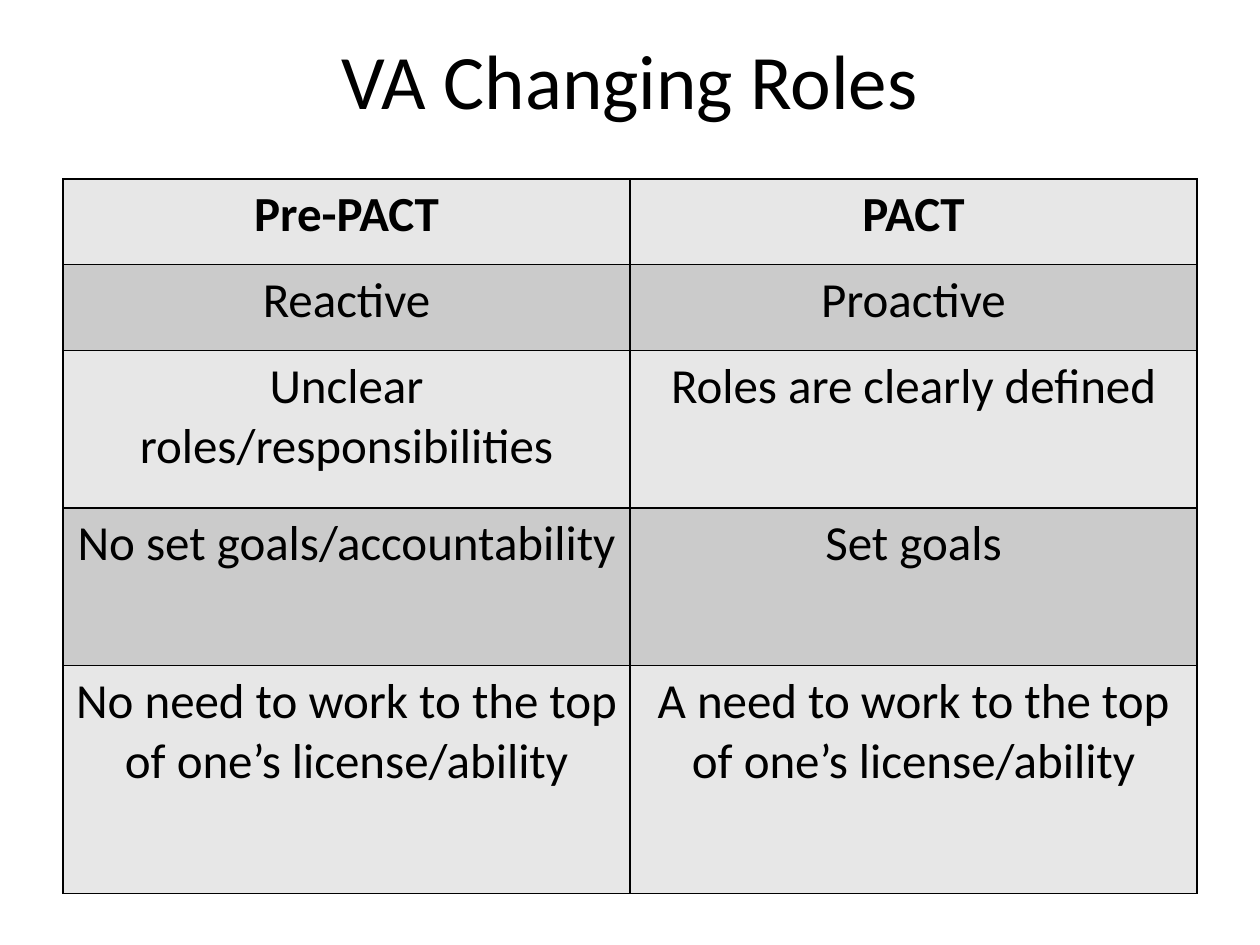
from pptx import Presentation
from pptx import util as u
from pptx.dml.color import RGBColor
from pptx.enum import text
from pptx.oxml import parse_xml
from pptx.oxml.ns import nsdecls

TITLE = "VA Changing Roles"
ROLES = [
    ("Pre-PACT", "PACT"),
    ("Reactive", "Proactive"),
    ("Unclear roles/responsibilities", "Roles are clearly defined"),
    ("No set goals/accountability", "Set goals"),
    ("No need to work to the top of one’s license/ability",
     "A need to work to the top of one’s license/ability"),
]
ROW_HEIGHTS = [0.68, 0.68, 1.25, 1.25, 1.81]
BANDS = ["E7E7E7", "CBCBCB"]
BLACK = "000000"
WIDTH, HEIGHT = 10, 7.5
MARGIN, TABLE_TOP, TITLE_HEIGHT = WIDTH / 20, 1.42, HEIGHT / 6


def color(hex_code):
    return RGBColor.from_string(hex_code)


def write(frame, words, size, bold=False):
    frame.vertical_anchor = frame.vertical_anchor or text.MSO_ANCHOR.TOP
    para = frame.paragraphs[0]
    para.alignment = text.PP_ALIGN.CENTER
    span = para.add_run()
    span.text = words
    span.font.name = "Calibri"
    span.font.size = u.Pt(size)
    span.font.bold = bold
    span.font.color.rgb = color(BLACK)


def add_borders(cell):
    properties = cell._tc.get_or_add_tcPr()
    for place, side in enumerate(("lnL", "lnR", "lnT", "lnB")):
        properties.insert(place, parse_xml(
            f'<a:{side} {nsdecls("a")} w="{u.Pt(1)}"><a:solidFill>'
            f'<a:srgbClr val="{BLACK}"/></a:solidFill></a:{side}>'))


def add_title(page):
    title = page.shapes.title
    title.left, title.top = 0, 0
    title.width, title.height = u.Inches(WIDTH), u.Inches(TITLE_HEIGHT)
    title.text_frame.vertical_anchor = text.MSO_ANCHOR.MIDDLE
    write(title.text_frame, TITLE, 44)


def add_roles_table(page):
    table = page.shapes.add_table(
        len(ROLES), len(ROLES[0]), u.Inches(MARGIN), u.Inches(TABLE_TOP),
        u.Inches(WIDTH - 2 * MARGIN), u.Inches(sum(ROW_HEIGHTS))).table
    for r, (height, entries) in enumerate(zip(ROW_HEIGHTS, ROLES)):
        table.rows[r].height = u.Inches(height)
        for c, words in enumerate(entries):
            cell = table.cell(r, c)
            cell.fill.solid()
            cell.fill.fore_color.rgb = color(BANDS[r % 2])
            write(cell.text_frame, words, 28, bold=r == 0)
            add_borders(cell)


def main():
    deck = Presentation()
    deck.slide_width, deck.slide_height = u.Inches(WIDTH), u.Inches(HEIGHT)
    page = deck.slides.add_slide(deck.slide_layouts[5])
    add_title(page)
    add_roles_table(page)
    deck.save("out.pptx")


if __name__ == "__main__":
    main()
